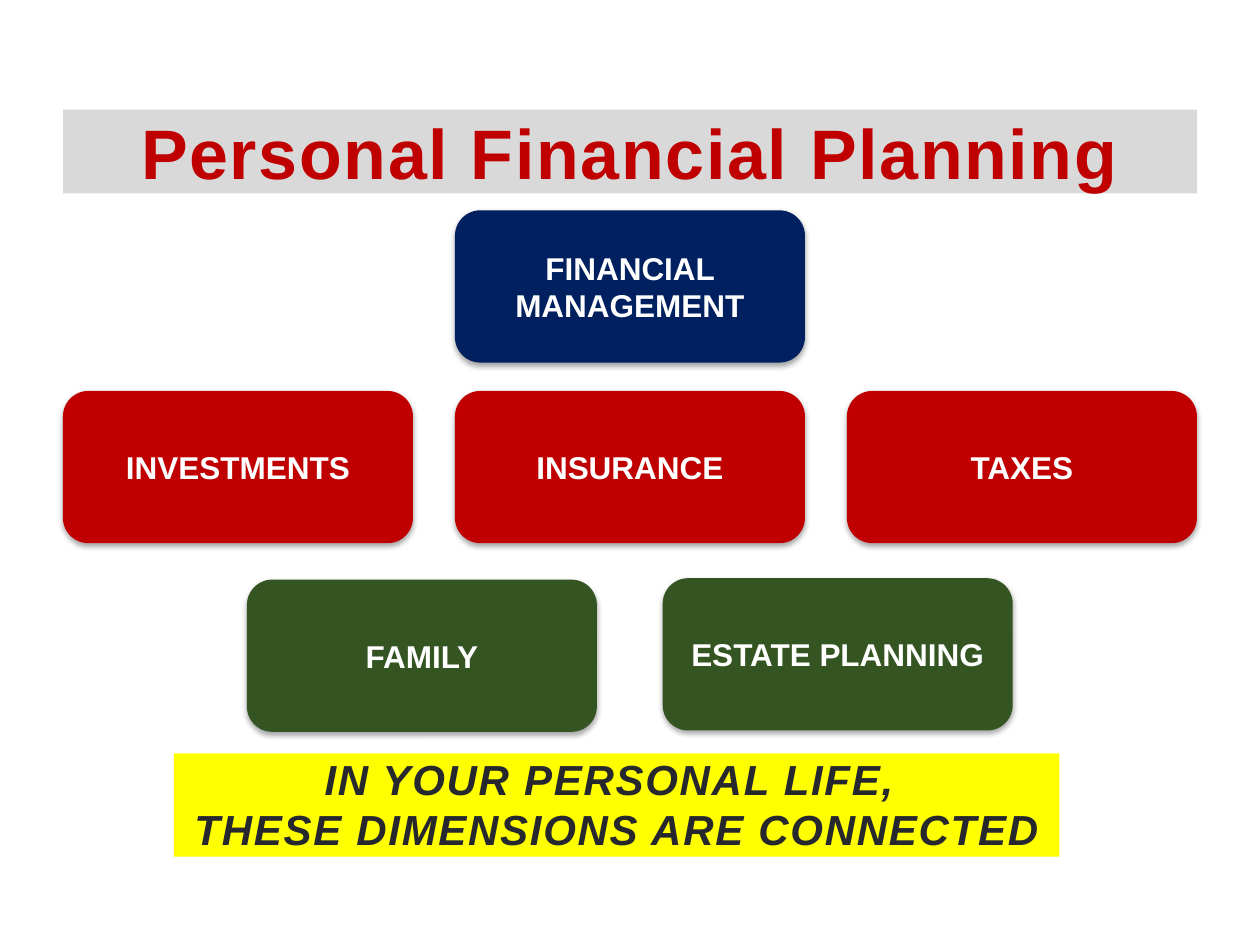
"""Build the personal financial planning slide."""
from dataclasses import dataclass

from lxml import etree
from pptx import Presentation
from pptx.dml.color import RGBColor
from pptx.enum.shapes import MSO_SHAPE
from pptx.enum.text import MSO_ANCHOR, MSO_AUTO_SIZE, PP_ALIGN
from pptx.oxml.ns import qn
from pptx.util import Pt

ROUNDED = MSO_SHAPE.ROUNDED_RECTANGLE
CENTER = PP_ALIGN.CENTER
TOP = MSO_ANCHOR.TOP
MIDDLE = MSO_ANCHOR.MIDDLE
NO_AUTOFIT = MSO_AUTO_SIZE.NONE
TITLE_ONLY_LAYOUT = 5
FONT = "Arial"
MARGIN, COLUMN_PITCH = 36, 224
CARD_WIDTH, CARD_HEIGHT = 200, 87
NAVY, RED, GREEN = "002060", "C00000", "345522"


@dataclass(frozen=True)
class Card:
    label: str
    left: float
    top: float
    color: str


CARDS = [
    Card("FINANCIAL MANAGEMENT", MARGIN + COLUMN_PITCH, 120.2, NAVY),
    *(
        Card(label, MARGIN + column * COLUMN_PITCH, 223.4, RED)
        for column, label in enumerate(("INVESTMENTS", "INSURANCE", "TAXES"))
    ),
    Card("FAMILY", 141.1, 331.2, GREEN),
    Card("ESTATE PLANNING", 378.7, 330.4, GREEN),
]


def rgb(value: str) -> RGBColor:
    return RGBColor.from_string(value)


def fill_shape(shape, color: str) -> None:
    shape.fill.solid()
    shape.fill.fore_color.rgb = rgb(color)


def place(shape, left: float, top: float, width: float, height: float) -> None:
    shape.left, shape.top = Pt(left), Pt(top)
    shape.width, shape.height = Pt(width), Pt(height)


def add_run(paragraph, text: str, size: float, color: str, spacing: float = 0,
            italic: bool = False) -> None:
    run = paragraph.add_run()
    run.text = text
    font = run.font
    font.name, font.size, font.bold, font.italic = FONT, Pt(size), True, italic
    font.color.rgb = rgb(color)
    if spacing:
        run._r.get_or_add_rPr().set("spc", str(round(spacing * 100)))


def prepare_banner(shape, color: str):
    fill_shape(shape, color)
    frame = shape.text_frame
    frame.word_wrap = True
    frame.auto_size = NO_AUTOFIT
    frame.vertical_anchor = TOP
    frame.margin_left = frame.margin_right = 0
    frame.margin_top = frame.margin_bottom = 0
    paragraph = frame.paragraphs[0]
    paragraph.alignment = CENTER
    return paragraph


def add_soft_shadow(shape) -> None:
    shape.shadow.inherit = False
    effects = shape._element.spPr.find(qn("a:effectLst"))
    shadow = etree.SubElement(
        effects, qn("a:outerShdw"), blurRad=str(Pt(3.1)), dist=str(Pt(1.8)),
        dir="5400000", rotWithShape="0")
    color = etree.SubElement(shadow, qn("a:srgbClr"), val="000000")
    etree.SubElement(color, qn("a:alpha"), val="35000")


def draw_card(slide, card: Card) -> None:
    shape = slide.shapes.add_shape(
        ROUNDED, Pt(card.left), Pt(card.top), Pt(CARD_WIDTH), Pt(CARD_HEIGHT))
    fill_shape(shape, card.color)
    shape.line.fill.background()
    add_soft_shadow(shape)
    frame = shape.text_frame
    frame.word_wrap = True
    frame.vertical_anchor = MIDDLE
    paragraph = frame.paragraphs[0]
    paragraph.alignment = CENTER
    add_run(paragraph, card.label, 18, "FFFFFF")


def main() -> None:
    presentation = Presentation()
    presentation.slide_width, presentation.slide_height = Pt(720), Pt(540)
    slide = presentation.slides.add_slide(
        presentation.slide_layouts[TITLE_ONLY_LAYOUT])

    title = slide.shapes.title
    place(title, MARGIN, 62.6, 648, 48)
    add_run(prepare_banner(title, "D9D9D9"), "Personal Financial Planning",
            40, RED, spacing=1)

    message = slide.shapes.add_textbox(Pt(99.4), Pt(430.5), Pt(506), Pt(59))
    paragraph = prepare_banner(message, "FFFF00")
    add_run(paragraph, "IN YOUR PERSONAL LIFE, ", 24, "26282D", 1, True)
    paragraph.add_line_break()
    add_run(paragraph, "THESE DIMENSIONS ARE CONNECTED", 24, "26282D", 1, True)

    for card in CARDS:
        draw_card(slide, card)
    presentation.save("out.pptx")


if __name__ == "__main__":
    main()
